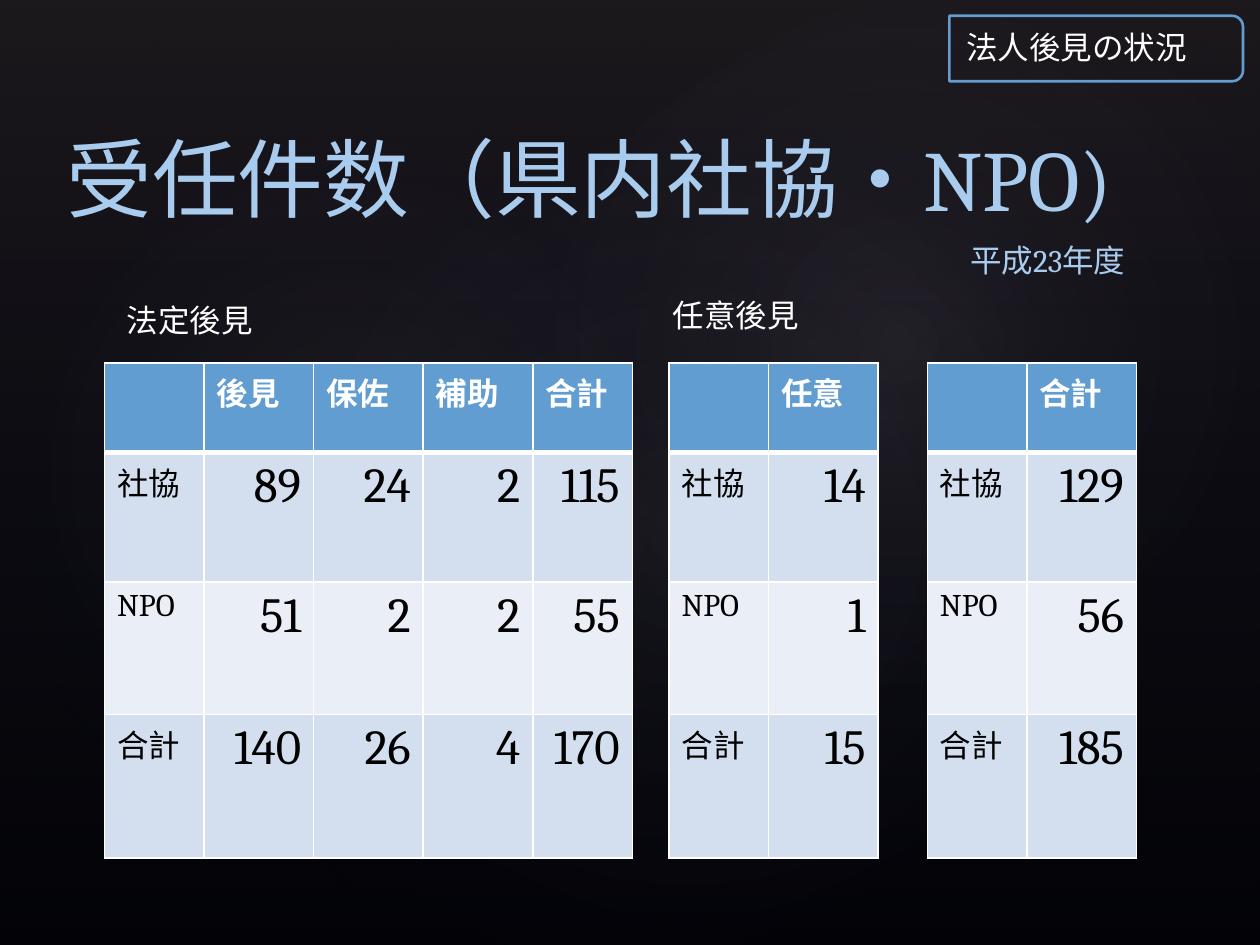
import pptx
import pptx.util
import pptx.dml.color
import pptx.enum.shapes
import pptx.enum.text
import pptx.oxml
import pptx.oxml.ns

Inches = pptx.util.Inches
Pt = pptx.util.Pt
RGBColor = pptx.dml.color.RGBColor
MSO_SHAPE = pptx.enum.shapes.MSO_SHAPE
ANCHOR = pptx.enum.text.MSO_ANCHOR
ALIGN = pptx.enum.text.PP_ALIGN
NS = pptx.oxml.ns.nsdecls("a")

BLACK = RGBColor(0x00, 0x00, 0x00)
WHITE = RGBColor(0xFF, 0xFF, 0xFF)
BLUE = RGBColor(0x62, 0x9D, 0xD1)
PALE_BLUE = RGBColor(0xA9, 0xCC, 0xEE)
BAND_DARK = RGBColor(0xD3, 0xDF, 0xEE)
BAND_LIGHT = RGBColor(0xEA, 0xEF, 0xF7)
NAVY = RGBColor(0x24, 0x28, 0x52)
MAUVE = RGBColor(0x50, 0x46, 0x52)
MIST = RGBColor(0xC4, 0xBC, 0xC6)

LINEAR = '<a:lin ang="5400000" scaled="0"/>'
RADIAL = '<a:path path="circle"><a:fillToRect l="50000" t="50000" r="50000" b="50000"/></a:path>'
LABEL_W, VALUE_W = 0.79, 0.87
ROW_HEIGHTS = (0.71, 1.03, 1.05, 1.14)


class SlideBuilder:
    font = "Cambria"
    small, large = 18, 28

    def __init__(self, slide):
        self.slide = slide

    def background(self, color):
        fill = self.slide.background.fill
        fill.solid()
        fill.fore_color.rgb = color

    def shape(self, kind, x, y, w, h, rotation=0):
        sp = self.slide.shapes.add_shape(kind, Inches(x), Inches(y), Inches(w), Inches(h))
        sp.rotation = rotation
        sp.shadow.inherit = False
        sp.fill.background()
        sp.line.fill.background()
        return sp

    def glow(self, kind, box, stops, direction, rotation=0):
        sp = self.shape(kind, *box, rotation)
        gs = "".join(
            f'<a:gs pos="{pos * 1000}"><a:srgbClr val="{color}">'
            f'<a:alpha val="{alpha * 1000}"/></a:srgbClr></a:gs>'
            for pos, color, alpha in stops)
        grad = pptx.oxml.parse_xml(
            f'<a:gradFill {NS} rotWithShape="1"><a:gsLst>{gs}</a:gsLst>{direction}</a:gradFill>')
        no_fill = sp._element.spPr.find(pptx.oxml.ns.qn("a:noFill"))
        no_fill.getparent().replace(no_fill, grad)

    def frame(self, x, y, w, h, rotation):
        sp = self.shape(MSO_SHAPE.ROUND_2_SAME_RECTANGLE, x, y, w, h, rotation)
        sp.line.color.rgb = BLUE
        sp.line.width = Pt(1.5)

    def run(self, p, text, size, color, bold=False):
        r = p.add_run()
        r.text = text
        r.font.name = self.font
        r.font.size = Pt(size)
        r.font.bold = bold
        r.font.color.rgb = color

    def text(self, x, y, w, h, text, size=small, color=WHITE, anchor=ANCHOR.TOP):
        sp = self.slide.shapes.add_textbox(Inches(x), Inches(y), Inches(w), Inches(h))
        tf = sp.text_frame
        tf.word_wrap = True
        tf.vertical_anchor = anchor
        self.run(tf.paragraphs[0], text, size, color)
        return tf

    def borders(self, cell, row):
        widths = {"L": 1, "R": 1, "T": 3 if row == 1 else 1, "B": 3 if row == 0 else 1}
        for side, width in widths.items():
            cell._tc.get_or_add_tcPr().append(pptx.oxml.parse_xml(
                f'<a:ln{side} {NS} w="{Pt(width)}"><a:solidFill>'
                f'<a:srgbClr val="{WHITE}"/></a:solidFill></a:ln{side}>'))

    def table(self, x, y, header, rows):
        widths = [LABEL_W] + [VALUE_W] * len(header)
        if len(header) > 1:
            widths[-1] = LABEL_W
        data = [["", *header], *rows]
        table = self.slide.shapes.add_table(
            len(data), len(widths), Inches(x), Inches(y),
            Inches(sum(widths)), Inches(sum(ROW_HEIGHTS))).table
        for column, width in zip(table.columns, widths):
            column.width = Inches(width)
        for i, values in enumerate(data):
            table.rows[i].height = Inches(ROW_HEIGHTS[i])
            for j, value in enumerate(values):
                self.cell(table.cell(i, j), i, j, value)

    def cell(self, cell, i, j, value):
        self.borders(cell, i)
        cell.fill.solid()
        cell.fill.fore_color.rgb = BLUE if i == 0 else (BAND_LIGHT, BAND_DARK)[i % 2]
        if value == "":
            return
        p = cell.text_frame.paragraphs[0]
        is_number = i > 0 and j > 0
        if is_number:
            p.alignment = ALIGN.RIGHT
        self.run(p, str(value), self.large if is_number else self.small,
                 WHITE if i == 0 else BLACK, bold=i == 0)


def main():
    prs = pptx.Presentation()
    prs.slide_width, prs.slide_height = Inches(10), Inches(7.5)
    s = SlideBuilder(prs.slides.add_slide(prs.slide_layouts[6]))

    s.background(BLACK)
    s.glow(MSO_SHAPE.RECTANGLE, (0, 0, 10, 7.5), [(0, MAUVE, 36), (100, NAVY, 10)], LINEAR)
    for box, rotation, alpha in [
        ((1.5, 1.14, 7.92, 6.24), 328.7, 7),
        ((-0.3, 1.28, 6.06, 4.9), 294.3, 8),
        ((3.58, 0.13, 7.09, 5.2), 328.7, 8),
    ]:
        s.glow(MSO_SHAPE.OVAL, box, [(0, MIST, alpha), (58, NAVY, 0)], RADIAL, rotation)

    s.text(0.43, 0.84, 9.29, 1.02, "受任件数（県内社協・NPO)", 49, PALE_BLUE, ANCHOR.BOTTOM)

    names = ("社協", "NPO", "合計")
    for x, header, values in [
        (0.83, ["後見", "保佐", "補助", "合計"], [(89, 24, 2, 115), (51, 2, 2, 55), (140, 26, 4, 170)]),
        (5.31, ["任意"], [(14,), (1,), (15,)]),
        (7.36, ["合計"], [(129,), (56,), (185,)]),
    ]:
        s.table(x, 2.88, header, [(name, *row) for name, row in zip(names, values)])

    s.frame(8.44, -0.78, 0.52, 2.33, 90)
    tf = s.text(7.28, 0.16, 2.56, 0.47, "法人後見の状況", anchor=ANCHOR.MIDDLE)
    tf.margin_left = Inches(0.39)
    tf.margin_top = tf.margin_right = tf.margin_bottom = Inches(0.03)
    tf.paragraphs[0].line_spacing = 0.9

    s.text(0.91, 2.34, 2.83, 0.4, "法定後見")
    s.text(5.24, 2.3, 2.83, 0.4, "任意後見")
    s.text(7.6, 1.78, 2.02, 0.48, "平成23年度", color=PALE_BLUE, anchor=ANCHOR.BOTTOM)

    prs.save("out.pptx")


if __name__ == "__main__":
    main()
